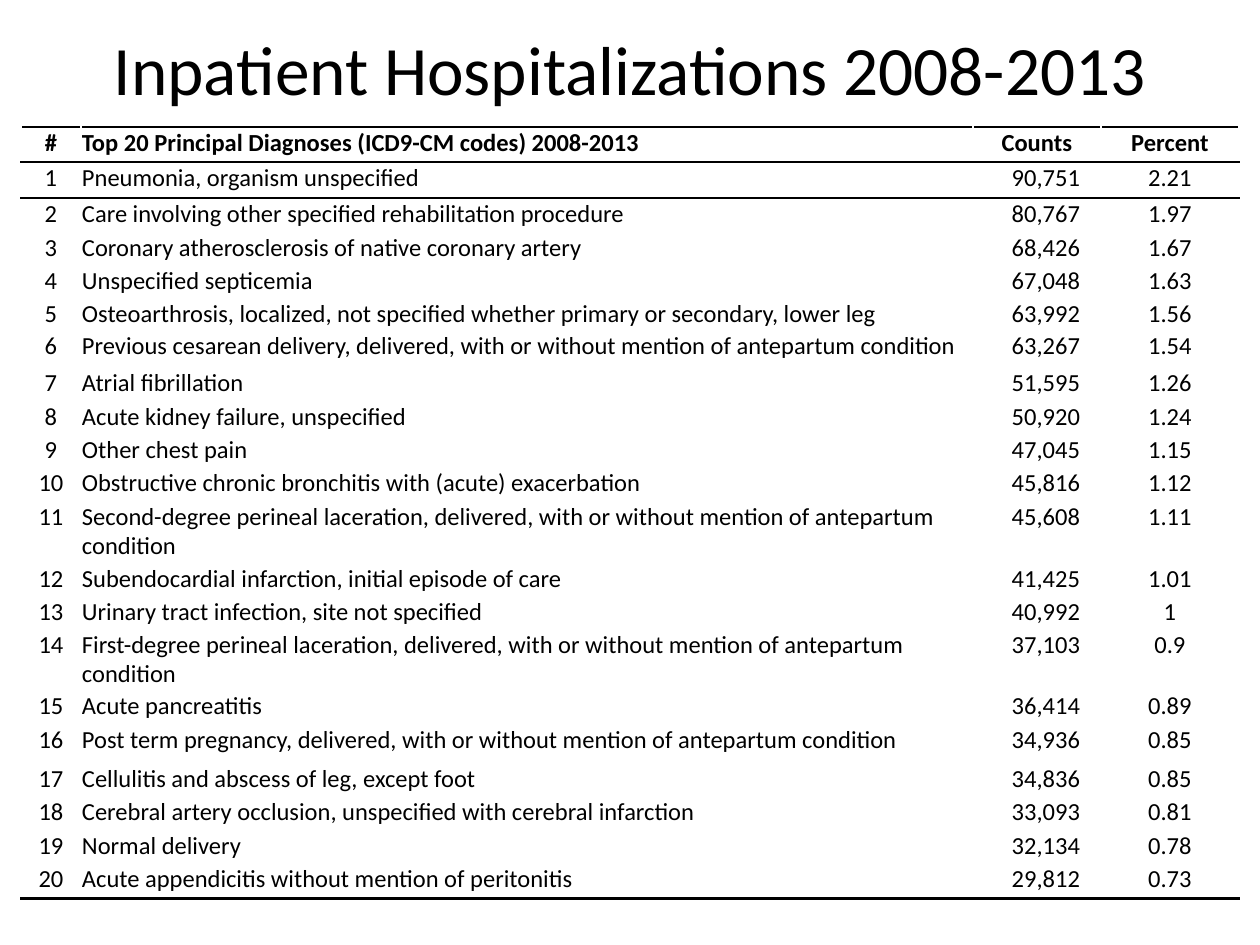
from dataclasses import dataclass

from lxml import etree
from pptx import Presentation
from pptx.dml.color import RGBColor
from pptx.enum.text import MSO_ANCHOR, MSO_AUTO_SIZE, PP_ALIGN
from pptx.oxml.ns import qn
from pptx.util import Emu, Pt

LEFT, CENTER = PP_ALIGN.LEFT, PP_ALIGN.CENTER
TOP, MIDDLE = MSO_ANCHOR.TOP, MSO_ANCHOR.MIDDLE
NO_AUTOFIT = MSO_AUTO_SIZE.NONE
BLACK = RGBColor(0x00, 0x00, 0x00)
WHITE = RGBColor(0xFF, 0xFF, 0xFF)
FONT = "Calibri"
EMU_PER_PX = 914400 / 126
TITLE_ONLY_LAYOUT = 5

TITLE_BOX = {"left": 63, "top": 10, "width": 1134, "height": 116}
TABLE_LEFT, TABLE_TOP = 21, 127
COLUMN_WIDTHS = [60, 892, 128, 138]
COLUMN_ALIGNMENTS = [CENTER, LEFT, CENTER, CENTER]
COUNTS_COLUMN = 2
COUNTS_INDENT = 19
HEADER = ["#", "Top 20 Principal Diagnoses (ICD9-CM codes) 2008-2013", "Counts", "Percent"]
HEADER_HEIGHT = 35


@dataclass(frozen=True)
class Diagnosis:
    name: str
    count: int
    percent: float
    height: int


DIAGNOSES = [
    Diagnosis("Pneumonia, organism unspecified", 90751, 2.21, 36),
    Diagnosis("Care involving other specified rehabilitation procedure", 80767, 1.97, 34),
    Diagnosis("Coronary atherosclerosis of native coronary artery", 68426, 1.67, 33),
    Diagnosis("Unspecified septicemia", 67048, 1.63, 33),
    Diagnosis("Osteoarthrosis, localized, not specified whether primary or secondary, "
              "lower leg", 63992, 1.56, 32),
    Diagnosis("Previous cesarean delivery, delivered, with or without mention of "
              "antepartum condition", 63267, 1.54, 37),
    Diagnosis("Atrial fibrillation", 51595, 1.26, 34),
    Diagnosis("Acute kidney failure, unspecified", 50920, 1.24, 33),
    Diagnosis("Other chest pain", 47045, 1.15, 33),
    Diagnosis("Obstructive chronic bronchitis with (acute) exacerbation", 45816, 1.12, 34),
    Diagnosis("Second-degree perineal laceration, delivered, with or without mention of "
              "antepartum condition", 45608, 1.11, 62),
    Diagnosis("Subendocardial infarction, initial episode of care", 41425, 1.01, 33),
    Diagnosis("Urinary tract infection, site not specified", 40992, 1, 33),
    Diagnosis("First-degree perineal laceration, delivered, with or without mention of "
              "antepartum condition", 37103, 0.9, 62),
    Diagnosis("Acute pancreatitis", 36414, 0.89, 34),
    Diagnosis("Post term pregnancy, delivered, with or without mention of "
              "antepartum condition", 34936, 0.85, 39),
    Diagnosis("Cellulitis and abscess of leg, except foot", 34836, 0.85, 33),
    Diagnosis("Cerebral artery occlusion, unspecified with cerebral infarction",
              33093, 0.81, 34),
    Diagnosis("Normal delivery", 32134, 0.78, 33),
    Diagnosis("Acute appendicitis without mention of peritonitis", 29812, 0.73, 35),
]
# Row boundaries, counted from the top edge of the table, that carry a black rule
RULED_BOUNDARIES = {0, 1, 2, len(DIAGNOSES) + 1}


def px(length: float) -> Emu:
    return Emu(round(length * EMU_PER_PX))


def apply(target, values: dict) -> None:
    for name, value in values.items():
        setattr(target, name, value)


def format_paragraph(paragraph, alignment, size: float, bold: bool) -> None:
    paragraph.alignment = alignment
    apply(paragraph.font, {"name": FONT, "size": Pt(size), "bold": bold})
    paragraph.font.color.rgb = BLACK


def add_border(cell, side: str, color: RGBColor, width: float) -> None:
    properties = cell._tc.get_or_add_tcPr()
    line = etree.SubElement(properties, qn(f"a:ln{side}"), w=str(Pt(width)))
    fill = etree.SubElement(line, qn("a:solidFill"))
    etree.SubElement(fill, qn("a:srgbClr"), val=str(color))


def add_borders(cell, row: int) -> None:
    """White sides, and a black top or bottom where the row meets a rule."""
    for side in "LR":
        add_border(cell, side, WHITE, 1)
    for side, boundary in (("T", row), ("B", row + 1)):
        ruled = boundary in RULED_BOUNDARIES
        add_border(cell, side, BLACK if ruled else WHITE, 1.5 if ruled else 1)


def fill_cell(cell, text: str, row: int, column: int) -> None:
    is_header = row == 0
    indent = COUNTS_INDENT if column == COUNTS_COLUMN and not is_header else 1
    apply(cell, {"text": text, "margin_left": px(indent), "margin_right": px(1),
                 "margin_top": px(1), "margin_bottom": 0, "vertical_anchor": TOP})
    format_paragraph(cell.text_frame.paragraphs[0], COLUMN_ALIGNMENTS[column], 14, is_header)
    add_borders(cell, row)
    cell.fill.background()


def add_title(slide) -> None:
    title = slide.shapes.title
    apply(title, {name: px(length) for name, length in TITLE_BOX.items()})
    title.text_frame.text = "Inpatient Hospitalizations 2008-2013"
    apply(title.text_frame, {"vertical_anchor": MIDDLE, "auto_size": NO_AUTOFIT,
                             "word_wrap": True})
    format_paragraph(title.text_frame.paragraphs[0], CENTER, 39.6, False)


def add_diagnosis_table(slide) -> None:
    rows = [HEADER] + [
        [str(rank), item.name, f"{item.count:,}", f"{item.percent:g}"]
        for rank, item in enumerate(DIAGNOSES, start=1)
    ]
    heights = [HEADER_HEIGHT] + [item.height for item in DIAGNOSES]
    table = slide.shapes.add_table(
        len(rows), len(HEADER), px(TABLE_LEFT), px(TABLE_TOP),
        px(sum(COLUMN_WIDTHS)), px(sum(heights))).table
    apply(table, {"first_row": False, "horz_banding": False})
    for column, width in zip(table.columns, COLUMN_WIDTHS):
        column.width = px(width)
    for row_index, (texts, height) in enumerate(zip(rows, heights)):
        table.rows[row_index].height = px(height)
        for column_index, text in enumerate(texts):
            fill_cell(table.cell(row_index, column_index), text, row_index, column_index)


def main() -> None:
    presentation = Presentation()
    apply(presentation, {"slide_width": px(1260), "slide_height": px(945)})
    slide = presentation.slides.add_slide(presentation.slide_layouts[TITLE_ONLY_LAYOUT])
    add_title(slide)
    add_diagnosis_table(slide)
    presentation.save("out.pptx")


if __name__ == "__main__":
    main()
